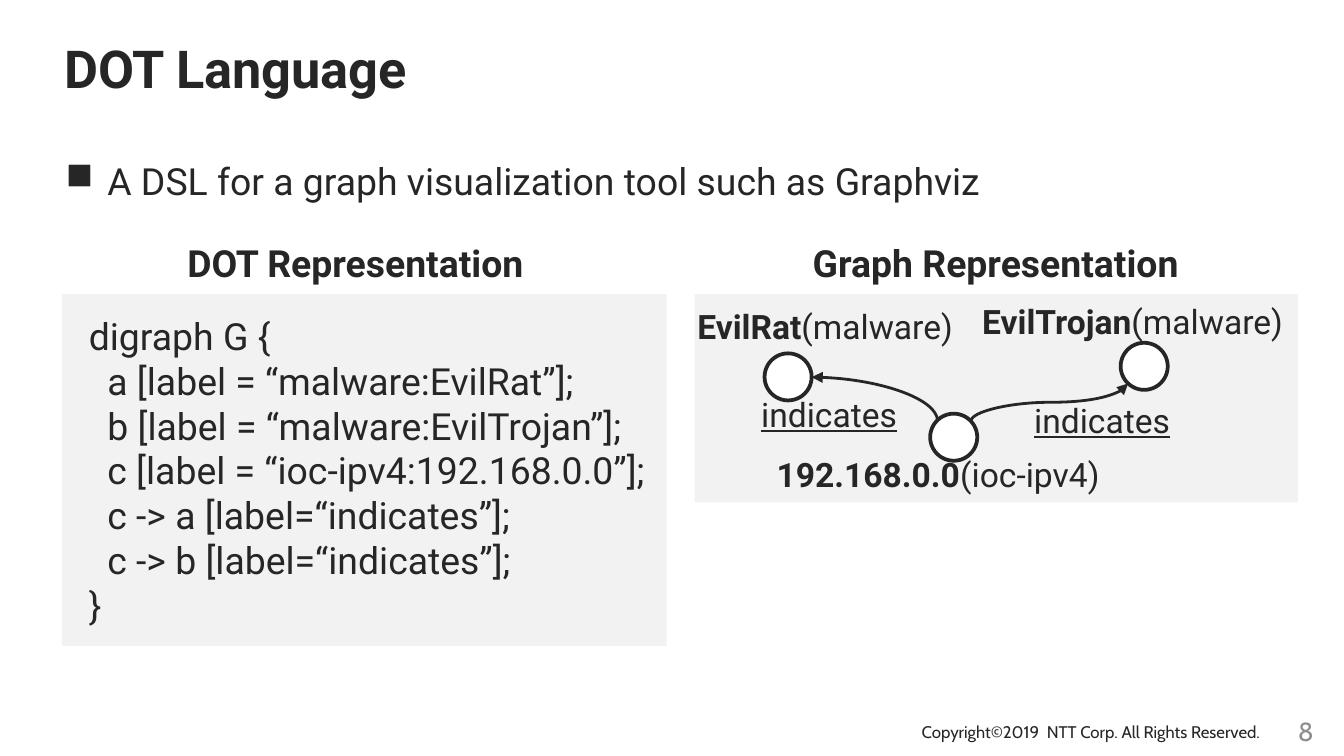
from dataclasses import dataclass
from lxml.etree import SubElement
from pptx import Presentation
from pptx.dml.color import RGBColor
from pptx.enum.shapes import MSO_CONNECTOR, MSO_SHAPE
from pptx.enum.text import MSO_ANCHOR, PP_ALIGN
from pptx.oxml.ns import qn
from pptx.util import Cm, Pt


@dataclass(frozen=True)
class Theme:
    ink: RGBColor = RGBColor(0x26, 0x26, 0x26)
    gray: RGBColor = RGBColor(0x8E, 0x8E, 0x8E)
    panel: RGBColor = RGBColor(0xF2, 0xF2, 0xF2)
    white: RGBColor = RGBColor(0xFF, 0xFF, 0xFF)
    font: str = "Roboto"
    foot: str = "Cabin"
    title: int = 28
    body: int = 20
    label: int = 18
    page: int = 14
    small: int = 9


theme = Theme()


def add_text(shapes, text, at, size, align=PP_ALIGN.CENTER, wrap=True,
             bold=None, font=theme.font, color=theme.ink):
    box = shapes.add_textbox(*map(Cm, at))
    box.text_frame.word_wrap = wrap
    para = box.text_frame.paragraphs[0]
    para.text = text
    para.alignment = align
    para.font.size = Pt(size)
    para.font.name = font
    para.font.bold = bold
    para.font.color.rgb = color
    return box


def add_plain(shapes, kind, at, fill):
    """Add a filled shape with no outline and no shadow."""
    shape = shapes.add_shape(kind, *map(Cm, at))
    shape.shadow.inherit = False
    shape.fill.solid()
    shape.fill.fore_color.rgb = fill
    shape.line.fill.background()
    return shape


deck = Presentation()
deck.slide_width, deck.slide_height = Cm(25.4), Cm(14.29)
slide = deck.slides.add_slide(deck.slide_layouts[6])
shapes = slide.shapes

# Footer
page = add_text(shapes, "8", (24.03, 13.31, 1.3, 1.02), theme.page,
                font=theme.foot, color=theme.gray)
page.text_frame.vertical_anchor = MSO_ANCHOR.MIDDLE
add_text(shapes, "Copyright©2019  NTT Corp. All Rights Reserved.",
         (17.17, 13.51, 6.96, 0.64), theme.small, PP_ALIGN.LEFT,
         wrap=False, font=theme.foot)

# Title and bullet
add_text(shapes, "DOT Language", (0.97, 0.56, 19.28, 1.32), theme.title,
         PP_ALIGN.LEFT, bold=True)
body = add_text(shapes, "", (0.99, 2.79, 23.47, 10.21), theme.body, PP_ALIGN.LEFT)
para = body.text_frame.paragraphs[0]
para.text = "A DSL for a graph visualization tool such as Graphviz"
para.line_spacing = 1.1
props = para._p.get_or_add_pPr()
props.set("marL", str(Cm(0.79)))
props.set("indent", str(-Cm(0.79)))
bullet = SubElement(props, qn("a:buChar"))
bullet.set("char", "■")
props.insert(1, bullet)

# Panel headings
for text, left, width in (("DOT Representation", 3.1, 7.24),
                          ("Graph Representation", 14.91, 7.82)):
    add_text(shapes, text, (left, 4.42, width, 1.12), theme.body,
             wrap=False, bold=True)

# Code panel
code = add_plain(shapes, MSO_SHAPE.RECTANGLE, (1.17, 5.56, 11.43, 6.65), theme.panel)
frame = code.text_frame
frame.word_wrap = False
frame.vertical_anchor = MSO_ANCHOR.MIDDLE
frame.margin_left = frame.margin_right = Cm(0.51)
frame.margin_top = frame.margin_bottom = Cm(0.51)
frame.text = """digraph G {
  a [label = “malware:EvilRat”];
  b [label = “malware:EvilTrojan”];
  c [label = “ioc-ipv4:192.168.0.0”];
  c -> a [label=“indicates”];
  c -> b [label=“indicates”];
}"""
for para in frame.paragraphs:
    para.alignment = PP_ALIGN.JUSTIFY
    para.font.size = Pt(theme.body)
    para.font.name = theme.font
    para.font.color.rgb = theme.ink

# Graph panel
graph = shapes.add_group_shape().shapes
add_plain(graph, MSO_SHAPE.RECTANGLE, (13.13, 5.56, 11.4, 3.94), theme.panel)

nodes = (
    ("EvilRat", "(malware)", (14.45, 6.68), (12.93, 5.66, 5.33, 1.02)),
    ("192.168.0.0", "(ioc-ipv4)", (17.58, 7.82), (13.74, 8.46, 7.98, 1.02)),
    ("EvilTrojan", "(malware)", (21.18, 6.48), (17.91, 5.56, 6.99, 1.02)),
)
for name, kind, spot, at in nodes:
    node = add_plain(graph, MSO_SHAPE.OVAL, (*spot, 0.89, 0.89), theme.white)
    node.line.color.rgb = theme.ink
    node.line.width = Pt(2)
    label = add_text(graph, name, at, theme.label)
    para = label.text_frame.paragraphs[0]
    para.runs[0].font.bold = True
    para.add_run().text = kind

# Curved edges, each with its arrowhead at the start; the second is turned
edges = (
    ("curvedConnector2", 0, (15.34, 7.13, 17.72, 7.96)),
    ("curvedConnector3", 90, (19.48, 6.12, 20.19, 9.09)),
)
for curve, turn, ends in edges:
    edge = graph.add_connector(MSO_CONNECTOR.CURVE, *map(Cm, ends))
    edge.line.color.rgb = theme.ink
    edge.line.width = Pt(1.5)
    props = edge._element.spPr
    props.find(qn("a:prstGeom")).set("prst", curve)
    props.find(qn("a:xfrm")).set("rot", str(turn * 60000))
    SubElement(props.find(qn("a:ln")), qn("a:headEnd")).set("type", "triangle")
    SubElement(props, qn("a:effectLst"))

for at in ((13.97, 7.32, 3.4, 1.02), (19.05, 7.44, 3.56, 1.02)):
    label = add_text(graph, "indicates", at, theme.label)
    label.text_frame.paragraphs[0].runs[0].font.underline = True

deck.save("out.pptx")
